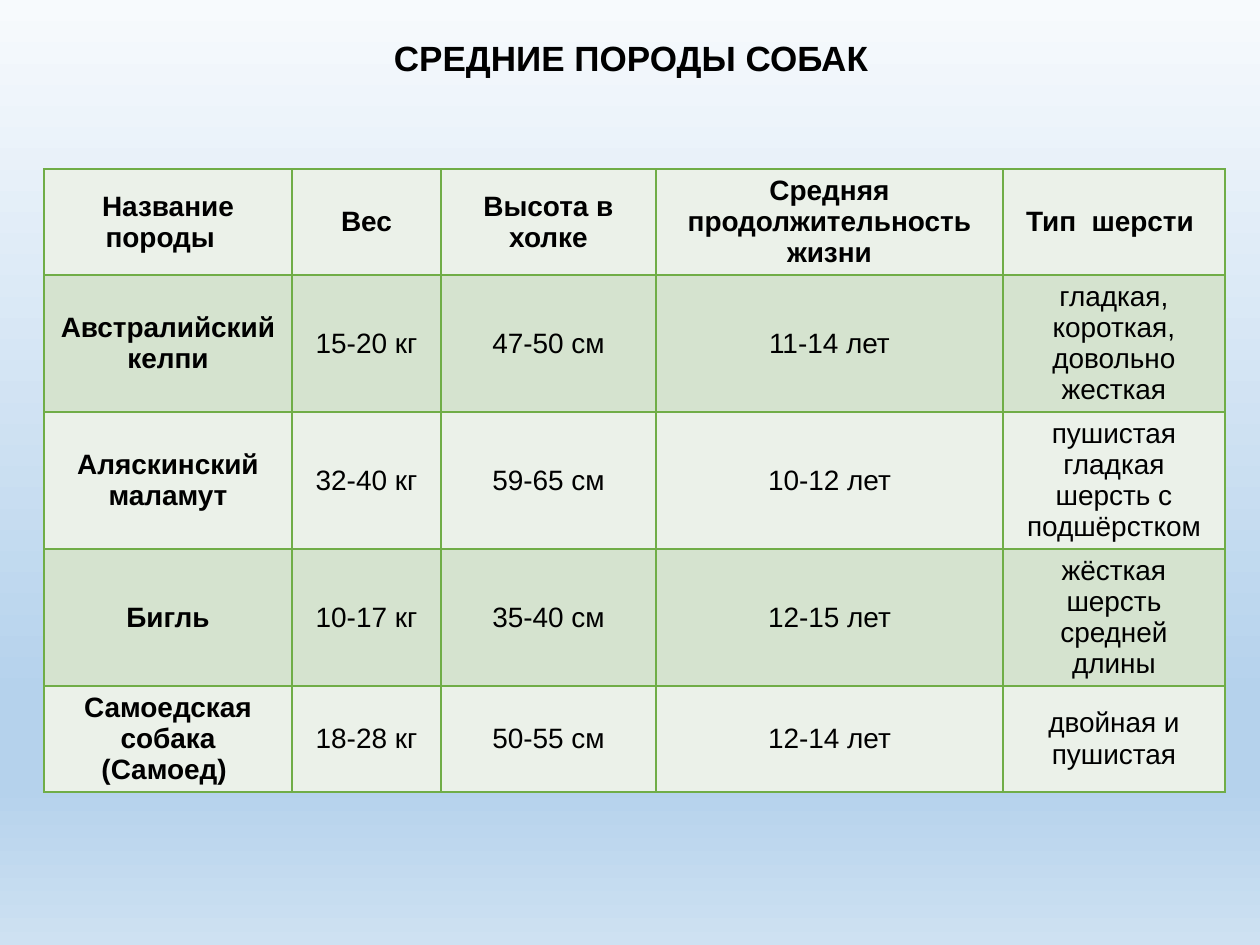
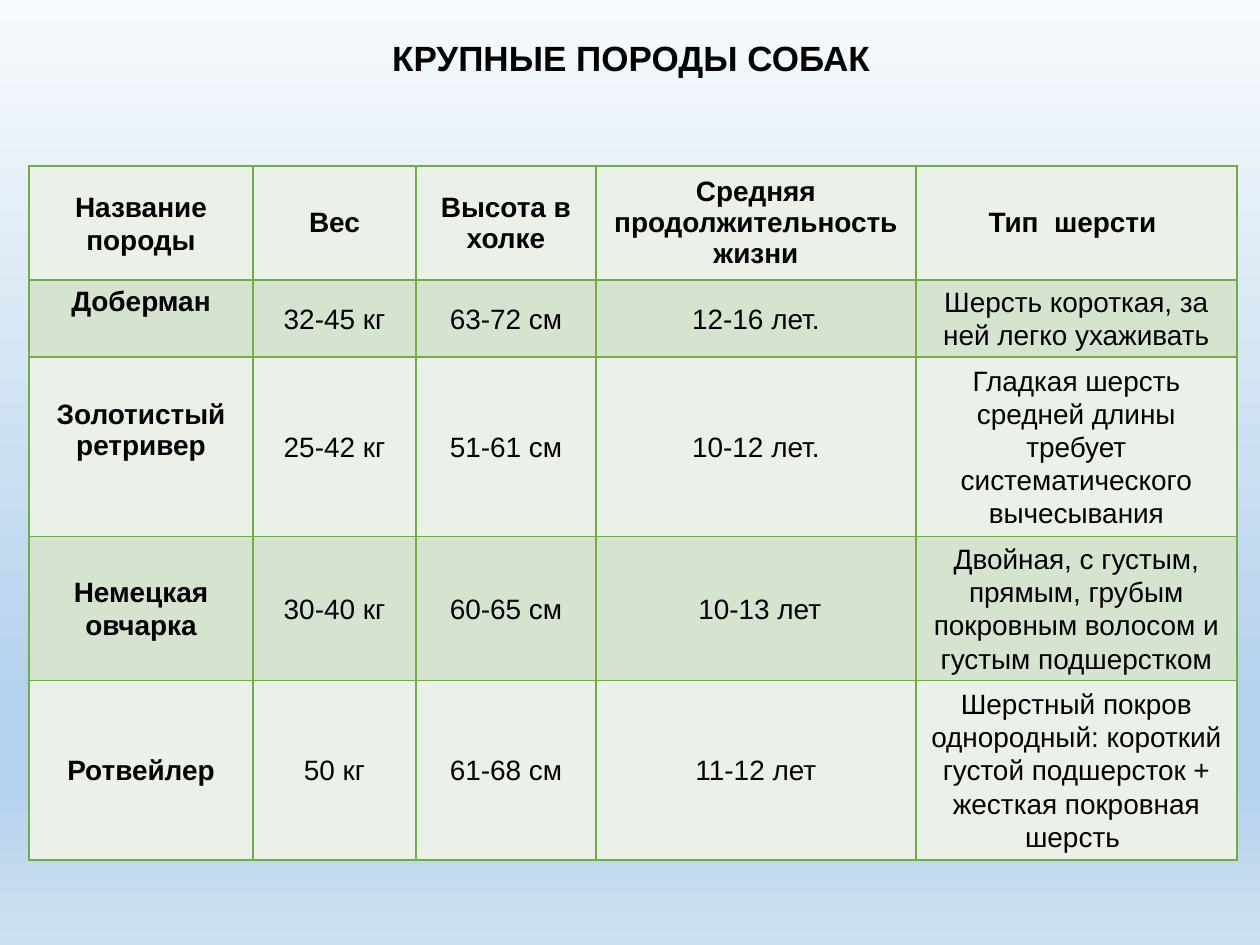
import dataclasses

import lxml.etree
import pptx
import pptx.dml.color
import pptx.enum.text
import pptx.oxml.ns
import pptx.util

EMU_PER_PX = 914400 / 126


@dataclasses.dataclass(frozen=True)
class Theme:
    font: str = "Arial"
    title_size: int = 20
    cell_size: int = 16
    text: str = "000000"
    border: str = "70AD47"
    border_width: int = 1
    bands: tuple[str, str] = ("EBF1E9", "D5E3CF")
    sky: tuple[tuple[int, str], ...] = (
        (0, "F7FAFD"), (74, "B5D2EC"), (83, "B5D2EC"), (100, "CEE1F2"),
    )


@dataclasses.dataclass(frozen=True)
class BreedPage:
    title: str
    left: int
    top: int
    widths: tuple[int, ...]
    heights: tuple[int, ...]
    side_inset: int
    end_inset: int
    line_spacing: float
    breeds: tuple[tuple[str, ...], ...]
    name_header: str = "Название породы"
    raised_rows: tuple[int, ...] = ()


THEME = Theme()
RAISED_INSET = 33
HEADERS = ("Вес", "Высота в холке", "Средняя продолжительность жизни", "Тип  шерсти ")

PAGES = (
    BreedPage(
        title="СРЕДНИЕ ПОРОДЫ СОБАК",
        left=44, top=169,
        widths=(248, 149, 215, 347, 222),
        heights=(106, 137, 137, 137, 106),
        side_inset=13, end_inset=6, line_spacing=1.0,
        name_header="Название породы  ",
        breeds=(
            ("Австралийский келпи", "15-20 кг", "47-50 см", "11-14 лет",
             "гладкая, короткая, довольно жесткая"),
            ("Аляскинский маламут", "32-40 кг", "59-65 см", "10-12 лет",
             "пушистая гладкая шерсть с подшёрстком"),
            ("Бигль", "10-17 кг", "35-40 см", "12-15 лет",
             "жёсткая шерсть средней длины"),
            ("Самоедская собака (Самоед) ", "18-28 кг", "50-55 см", "12-14 лет",
             "двойная и пушистая"),
        ),
    ),
    BreedPage(
        title="КРУПНЫЕ ПОРОДЫ СОБАК",
        left=29, top=166,
        widths=(224, 163, 180, 320, 321),
        heights=(114, 77, 166, 133, 166),
        side_inset=9, end_inset=0, line_spacing=1.07,
        raised_rows=(1, 2),
        breeds=(
            ("Доберман", "32-45 кг", "63-72 см", "12-16 лет.",
             "Шерсть короткая, за ней легко ухаживать"),
            ("Золотистый ретривер", "25-42 кг", "51-61 см", "10-12 лет.",
             "Гладкая шерсть средней длины требует систематического вычесывания"),
            ("Немецкая овчарка", "30-40 кг", "60-65 см", " 10-13 лет",
             "Двойная, с густым, прямым, грубым покровным волосом и густым подшерстком"),
            ("Ротвейлер", "50 кг", "61-68 см", "11-12 лет",
             "Шерстный покров однородный: короткий густой подшерсток + "
             "жесткая покровная шерсть "),
        ),
    ),
)


def px(length: int) -> pptx.util.Emu:
    return pptx.util.Emu(round(length * EMU_PER_PX))


def color(value: str) -> pptx.dml.color.RGBColor:
    return pptx.dml.color.RGBColor.from_string(value)


def add_child(parent, tag: str, **attributes: str):
    return lxml.etree.SubElement(parent, pptx.oxml.ns.qn(tag), attributes)


def paint_background(master) -> None:
    fill = master.background.fill
    fill.gradient()
    fill.gradient_angle = 270
    stops = master.element.find(".//" + pptx.oxml.ns.qn("a:gsLst"))
    for stop in list(stops):
        stops.remove(stop)
    for percent, value in THEME.sky:
        stop = add_child(stops, "a:gs", pos=str(percent * 1000))
        add_child(stop, "a:srgbClr", val=value)


def write_text(frame, text: str, size: int, bold: bool, spacing: float = 1.0) -> None:
    frame.word_wrap = True
    para = frame.paragraphs[0]
    para.alignment = pptx.enum.text.PP_ALIGN.CENTER
    para.line_spacing = spacing
    span = para.add_run()
    span.text = text
    span.font.name = THEME.font
    span.font.size = pptx.util.Pt(size)
    span.font.bold = bold
    span.font.color.rgb = color(THEME.text)


def add_borders(cell) -> None:
    properties = cell._tc.get_or_add_tcPr()
    width = str(pptx.util.Pt(THEME.border_width))
    for side in ("a:lnL", "a:lnR", "a:lnT", "a:lnB"):
        line = add_child(properties, side, w=width)
        add_child(add_child(line, "a:solidFill"), "a:srgbClr", val=THEME.border)


def add_title(page, title: str) -> None:
    box = page.shapes.add_textbox(px(4), px(30), px(1254), px(55))
    write_text(box.text_frame, title, THEME.title_size, True)


def add_breed_table(page, content: BreedPage) -> None:
    rows = ((content.name_header, *HEADERS), *content.breeds)
    table = page.shapes.add_table(
        len(rows), len(content.widths), px(content.left), px(content.top),
        px(sum(content.widths)), px(sum(content.heights)),
    ).table
    table.first_row = False
    table.horz_banding = False
    for column, width in zip(table.columns, content.widths):
        column.width = px(width)
    for row, height in zip(table.rows, content.heights):
        row.height = px(height)
    for row_index, row in enumerate(rows):
        for column_index, text in enumerate(row):
            is_name = column_index == 0
            is_header = row_index == 0
            raised = is_name and row_index in content.raised_rows
            single = raised or (is_header and not is_name)
            cell = table.cell(row_index, column_index)
            cell.margin_left = cell.margin_right = px(content.side_inset)
            cell.margin_top = px(content.end_inset)
            cell.margin_bottom = px(RAISED_INSET if raised else content.end_inset)
            cell.vertical_anchor = pptx.enum.text.MSO_ANCHOR.MIDDLE
            add_borders(cell)
            cell.fill.solid()
            cell.fill.fore_color.rgb = color(THEME.bands[row_index % 2])
            write_text(cell.text_frame, text, THEME.cell_size, is_header or is_name,
                       1.0 if single else content.line_spacing)


def main() -> None:
    deck = pptx.Presentation()
    deck.slide_width = px(1260)
    deck.slide_height = px(945)
    paint_background(deck.slide_master)
    for content in PAGES:
        page = deck.slides.add_slide(deck.slide_layouts[6])
        add_breed_table(page, content)
        add_title(page, content.title)
    deck.save("out.pptx")


if __name__ == "__main__":
    main()
